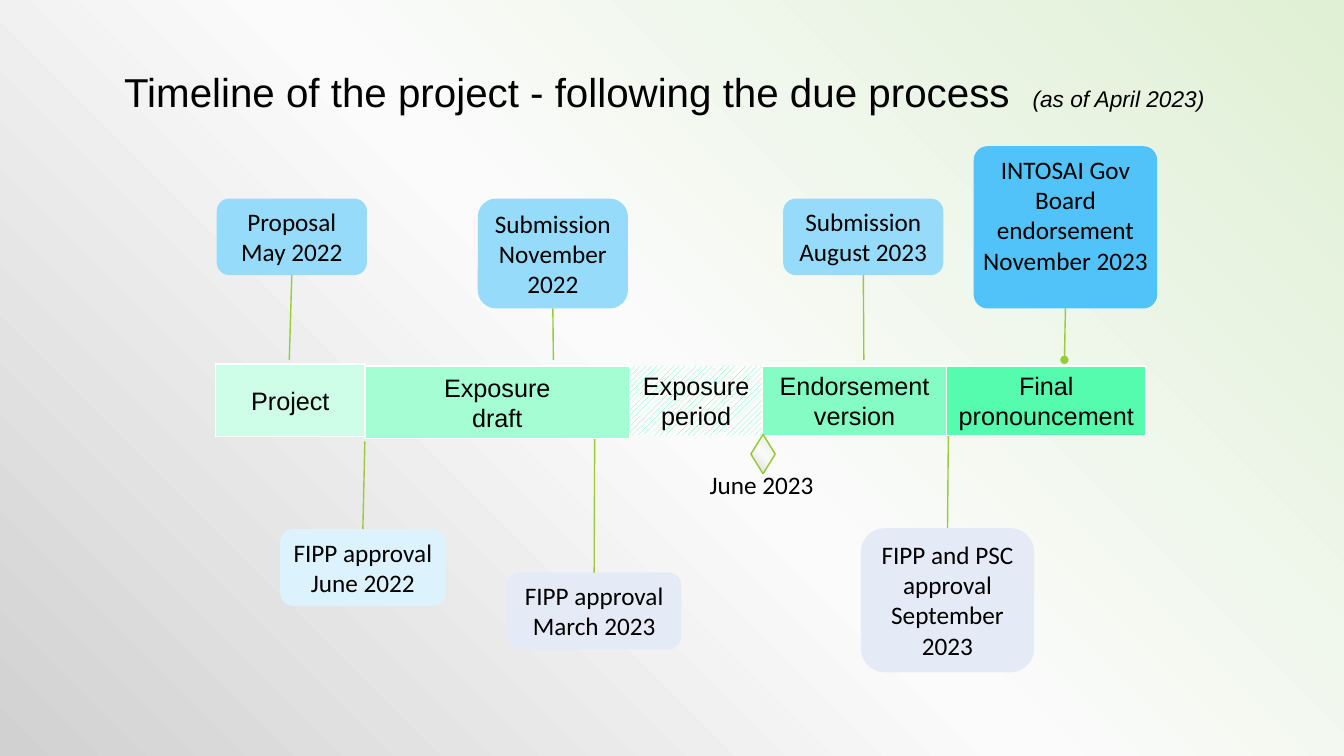
from lxml import etree
from pptx import Presentation
from pptx.dml.color import RGBColor
from pptx.enum.dml import MSO_PATTERN
from pptx.enum.shapes import MSO_CONNECTOR, MSO_SHAPE
from pptx.enum.text import MSO_ANCHOR, MSO_AUTO_SIZE, PP_ALIGN
from pptx.oxml.ns import qn
from pptx.util import Inches, Pt

COLORS = {name: RGBColor.from_string(value) for name, value in {
    "text": "000000", "white": "FFFFFF", "line": "99CB38", "diamond": "97CA33",
    "sky": "97DBFB", "blue": "51C3F9", "ice": "DCF3FE", "lavender": "E5EBF6",
    "mint1": "CEFEE7", "mint2": "A5FDD3", "mint3": "84FCC3", "mint4": "56FCAD",
}.items()}
GRADIENT_STOPS = [(0, "DFF0D4", 100), (51, "FBFBFB", 83), (100, "D1D1D1", 100)]

presentation = Presentation()
presentation.slide_width = Inches(13.333)
presentation.slide_height = Inches(7.5)
COLUMN = presentation.slide_width / 40
ROW = presentation.slide_height / 30
slide = presentation.slides.add_slide(presentation.slide_layouts[6])
shapes = slide.shapes


def write(shape, text, font_name, anchor, inset=None):
    frame = shape.text_frame
    frame.word_wrap = True
    frame.vertical_anchor = anchor
    if inset is not None:
        frame.margin_left = frame.margin_right = Inches(inset)
        frame.margin_top = frame.margin_bottom = Inches(0.04)
    frame.text = text
    for paragraph in frame.paragraphs:
        paragraph.alignment = PP_ALIGN.CENTER
        paragraph.font.name = font_name
        paragraph.font.size = Pt(18)
        paragraph.font.color.rgb = COLORS["text"]


def apply_gradient(fill, owner):
    fill.solid()
    solid = owner.find(qn("a:solidFill"))
    gradient = etree.Element(qn("a:gradFill"), rotWithShape="1")
    stops = etree.SubElement(gradient, qn("a:gsLst"))
    for position, color, opacity in GRADIENT_STOPS:
        stop = etree.SubElement(stops, qn("a:gs"), pos=str(position * 1000))
        tint = etree.SubElement(stop, qn("a:srgbClr"), val=color)
        if opacity < 100:
            etree.SubElement(tint, qn("a:alpha"), val=str(opacity * 1000))
    focus = etree.SubElement(gradient, qn("a:path"), path="circle")
    etree.SubElement(focus, qn("a:fillToRect"), l="100000", b="100000")
    owner.replace(solid, gradient)


background_fill = slide.background.fill
background_fill.solid()
apply_gradient(background_fill, slide.element.find(".//" + qn("p:bgPr")))

title = shapes.add_textbox(int(2.67 * COLUMN), int(1.96 * ROW), int(34.2 * COLUMN), int(2.84 * ROW))
write(title, "", "Arial", MSO_ANCHOR.BOTTOM)
heading = title.text_frame.paragraphs[0]
heading.line_spacing = 0.9
for text, size, italic in [
    ("Timeline of the project - following the due process  ", 28.8, False),
    ("(as of April 2023)", 16.2, True),
]:
    run = heading.add_run()
    run.text = text
    run.font.size = Pt(size)
    run.font.italic = italic

callouts = [
    ("Proposal May 2022", "sky", 6.45, 7.88, 4.47, 3.04, 8.61, 14.28, False),
    ("Submission November 2022", "sky", 14.22, 7.88, 4.47, 4.36, 16.47, 14.28, False),
    ("Submission August 2023", "sky", 23.31, 7.88, 4.77, 3.04, 25.71, 14.28, False),
    ("INTOSAI Gov Board endorsement November 2023", "blue", 28.98, 5.8, 5.46, 6.44, 31.68, 14.28, True),
    ("FIPP approval\nJune 2022", "ice", 8.34, 21, 4.92, 3.04, 10.86, 17.52, False),
    ("FIPP approval March 2023", "lavender", 15.09, 22.72, 5.19, 3.04, 17.7, 16.88, False),
    ("FIPP and PSC approval September 2023", "lavender", 25.62, 20.96, 5.16, 5.72, 28.23, 16.76, True),
]
for text, color, left, top, width, height, line_x, line_y, dotted in callouts:
    callout = shapes.add_shape(MSO_SHAPE.ROUNDED_RECTANGLE, int(left * COLUMN), int(top * ROW),
                               int(width * COLUMN), int(height * ROW))
    callout.shadow.inherit = False
    callout.fill.solid()
    callout.fill.fore_color.rgb = COLORS[color]
    callout.line.fill.background()
    is_final = color == "blue"
    if is_final:
        callout.adjustments[0] = 0.085
    write(callout, text, "Calibri", MSO_ANCHOR.TOP, 0 if is_final else 0.04)
    callout.text_frame.auto_size = MSO_AUTO_SIZE.SHAPE_TO_FIT_TEXT

    x, y = int(line_x * COLUMN), int(line_y * ROW)
    connector = shapes.add_connector(MSO_CONNECTOR.STRAIGHT, x, y, x, y)
    connector.end_connect(callout, 2 if top < line_y else 0)
    connector.line.color.rgb = COLORS["line"]
    connector.line.width = Pt(1)
    if dotted:
        etree.SubElement(connector.line._get_or_add_ln(), qn("a:headEnd"), type="oval")
    etree.SubElement(connector.element.spPr, qn("a:effectLst"))

stages = [
    ("Project", "mint1", 14.44, 2.88),
    ("Exposure\ndraft", "mint2", 14.52, 2.88),
    ("Exposure\nperiod", None, 14.52, 2.76),
    ("Endorsement version", "mint3", 14.52, 2.76),
    ("Final pronouncement", "mint4", 14.52, 2.76),
]
edges = [6.42, 10.86, 18.74, 22.7, 28.17, 34.11]
for (text, color, top, height), left, right in zip(stages, edges, edges[1:]):
    stage = shapes.add_shape(MSO_SHAPE.RECTANGLE, int(left * COLUMN), int(top * ROW),
                             int((right - left) * COLUMN), int(height * ROW))
    stage.shadow.inherit = False
    if color:
        stage.fill.solid()
        stage.fill.fore_color.rgb = COLORS[color]
        stage.line.color.rgb = COLORS["white"]
        stage.line.width = Pt(1)
    else:
        stage.fill.patterned()
        stage.fill.pattern = MSO_PATTERN.WIDE_UPWARD_DIAGONAL
        stage.fill.fore_color.rgb = COLORS["mint4"]
        stage.fill.back_color.rgb = COLORS["white"]
        stage.line.fill.background()
    write(stage, text, "Arial", MSO_ANCHOR.MIDDLE)

milestone = shapes.add_shape(MSO_SHAPE.DIAMOND, int(22.35 * COLUMN), int(17.24 * ROW),
                             int(0.72 * COLUMN), int(1.56 * ROW))
milestone.shadow.inherit = False
apply_gradient(milestone.fill, milestone.element.spPr)
milestone.line.color.rgb = COLORS["diamond"]
milestone.line.width = Pt(1)

milestone_label = shapes.add_textbox(int(20.04 * COLUMN), int(18.44 * ROW), int(5.25 * COLUMN), int(1.6 * ROW))
write(milestone_label, "June 2023", "Calibri", MSO_ANCHOR.TOP)
milestone_label.text_frame.auto_size = MSO_AUTO_SIZE.SHAPE_TO_FIT_TEXT

presentation.save("out.pptx")
